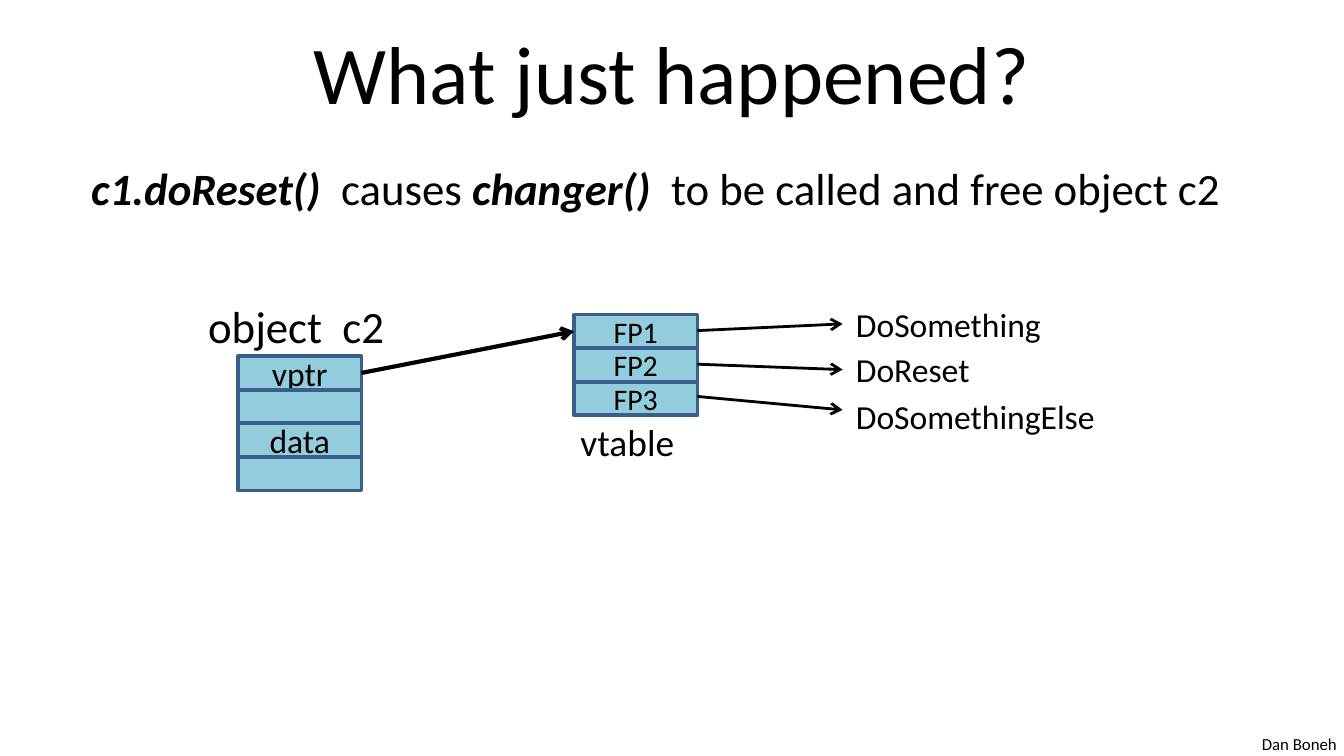
from lxml.etree import SubElement
from pptx import Presentation
from pptx.dml.color import RGBColor
from pptx.enum.shapes import MSO_CONNECTOR, MSO_SHAPE
from pptx.enum.text import MSO_ANCHOR, MSO_AUTO_SIZE, PP_ALIGN
from pptx.oxml.ns import qn
from pptx.util import Inches, Pt

COLORS = {"text": "000000", "cell": "93CDDD", "border": "3A5F8C"}
FONT = "Calibri"
CELL_W, CELL_H = 0.92, 0.25

TITLE = "What just happened?"
# (text, bold italic)
STATEMENT = [
    ("c1.doReset()  ", True),
    ("causes ", False),
    ("changer()  ", True),
    ("to be called and free object c2", False),
]
OBJECT = {"left": 1.77, "top": 2.65, "size": 18, "cells": ["vptr", "", "data", ""]}
VTABLE = {"left": 4.27, "top": 2.34, "size": 16, "cells": ["FP1", "FP2", "FP3"]}
# (text, size, left, top, width, height)
LABELS = [
    ("object  c2", 24, 1.45, 2.17, 1.52, 0.5),
    ("vtable", 20, 4.22, 3.07, 0.91, 0.44),
    ("Dan Boneh", 9, 9.29, 5.41, 0.76, 0.25),
]
# (name, label top, label width, arrow start height, arrow end height)
METHODS = [
    ("DoSomething", 2.21, 1.59, 2.46, 2.41),
    ("DoReset", 2.55, 1.06, 2.71, 2.75),
    ("DoSomethingElse", 2.9, 2.0, 2.95, 3.05),
]
METHOD_LEFT = 6.27


def rgb(name):
    return RGBColor.from_string(COLORS[name])


def add_run(p, text, size, strong=False):
    r = p.add_run()
    r.text = text
    r.font.name, r.font.size = FONT, Pt(size)
    r.font.bold = r.font.italic = strong
    r.font.color.rgb = rgb("text")


def add_label(s, runs, size, left, top, width, height):
    box = s.shapes.add_textbox(*map(Inches, (left, top, width, height)))
    tf = box.text_frame
    tf.word_wrap = False
    tf.auto_size = MSO_AUTO_SIZE.SHAPE_TO_FIT_TEXT
    for text, strong in runs:
        add_run(tf.paragraphs[0], text, size, strong)


def add_cells(s, left, top, size, cells):
    for row, text in enumerate(cells):
        sp = s.shapes.add_shape(
            MSO_SHAPE.RECTANGLE, Inches(left), Inches(top + row * CELL_H),
            Inches(CELL_W), Inches(CELL_H))
        sp.shadow.inherit = False
        sp.fill.solid()
        sp.fill.fore_color.rgb = rgb("cell")
        sp.line.color.rgb = rgb("border")
        sp.line.width = Pt(2)
        if text:
            tf = sp.text_frame
            tf.vertical_anchor = MSO_ANCHOR.MIDDLE
            tf.paragraphs[0].alignment = PP_ALIGN.CENTER
            add_run(tf.paragraphs[0], text, size)


def add_arrow(s, x1, y1, x2, y2, width):
    line = s.shapes.add_connector(
        MSO_CONNECTOR.STRAIGHT, *map(Inches, (x1, y1, x2, y2)))
    line.line.color.rgb = rgb("text")
    line.line.width = Pt(width)
    ln = line._element.spPr.find(qn("a:ln"))
    SubElement(ln, qn("a:tailEnd"), type="arrow")
    SubElement(line._element.spPr, qn("a:effectLst"))


def main():
    prs = Presentation()
    prs.slide_width = Inches(10)
    prs.slide_height = prs.slide_width * 9 // 16
    s = prs.slides.add_slide(prs.slide_layouts[5])

    title = s.shapes.title
    title.left, title.top, title.width, title.height = map(Inches, (0.5, 0.06, 9, 0.94))
    title.text_frame.vertical_anchor = MSO_ANCHOR.MIDDLE
    p = title.text_frame.paragraphs[0]
    p.alignment = PP_ALIGN.CENTER
    add_run(p, TITLE, 44)

    add_label(s, STATEMENT, 24, 0.58, 1.15, 8.63, 0.5)
    for text, size, *place in LABELS:
        add_label(s, [(text, False)], size, *place)

    for stack in (OBJECT, VTABLE):
        add_cells(s, **stack)
    add_arrow(s, OBJECT["left"] + CELL_W, OBJECT["top"] + CELL_H / 2,
              VTABLE["left"], VTABLE["top"] + CELL_H / 2, 2.25)

    for name, top, width, start, end in METHODS:
        add_arrow(s, VTABLE["left"] + CELL_W, start, METHOD_LEFT, end, 1.5)
        add_label(s, [(name, False)], 18, METHOD_LEFT, top, width, 0.4)

    prs.save("out.pptx")


if __name__ == "__main__":
    main()
